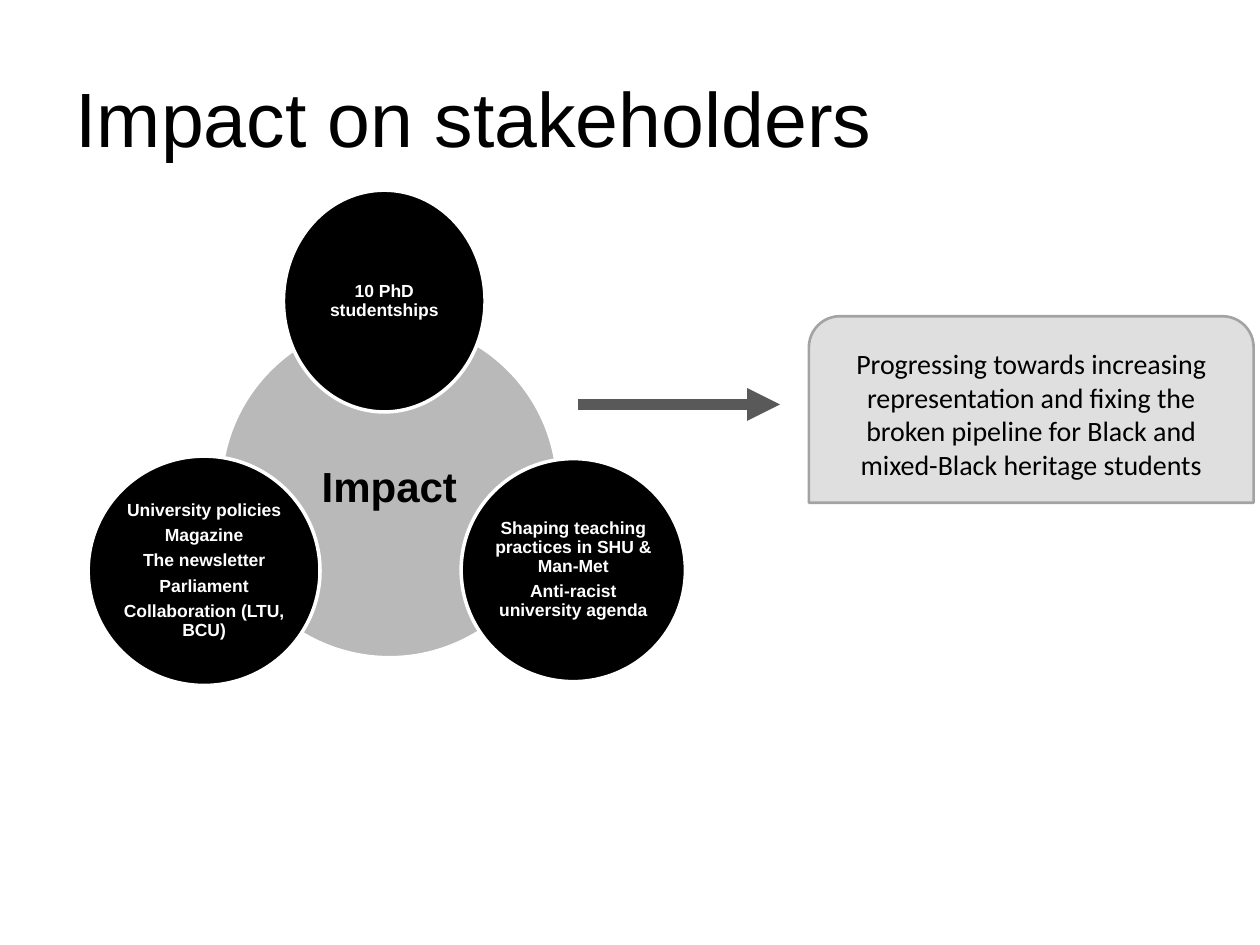
from dataclasses import dataclass

from lxml.etree import SubElement
from pptx import Presentation
from pptx.dml.color import RGBColor
from pptx.enum.shapes import MSO_CONNECTOR, MSO_SHAPE
from pptx.enum.text import MSO_ANCHOR, PP_ALIGN
from pptx.oxml.ns import qn
from pptx.util import Inches, Pt


@dataclass(frozen=True)
class Theme:
    black: RGBColor = RGBColor(0x00, 0x00, 0x00)
    white: RGBColor = RGBColor(0xFF, 0xFF, 0xFF)
    hub: RGBColor = RGBColor(0x74, 0x74, 0x74)
    arrow: RGBColor = RGBColor(0x59, 0x59, 0x59)
    outcome_fill: RGBColor = RGBColor(0xDF, 0xDF, 0xDF)
    outcome_line: RGBColor = RGBColor(0xA3, 0xA3, 0xA3)
    heading_font: str = "Arial"
    outcome_font: str = "Calibri"
    title_size: int = 44
    hub_size: int = 24
    outcome_size: int = 16
    satellite_size: int = 10


theme = Theme()


def add_run(paragraph, text, font_name, size, color, bold=False):
    run = paragraph.add_run()
    run.text = text
    run.font.name = font_name
    run.font.size = Pt(size)
    run.font.color.rgb = color
    run.font.bold = bold


def add_box(slide, preset, bounds, fill, line, line_width):
    shape = slide.shapes.add_shape(preset, *(Inches(value) for value in bounds))
    shape.shadow.inherit = False
    shape.fill.solid()
    shape.fill.fore_color.rgb = fill
    shape.line.color.rgb = line
    shape.line.width = Pt(line_width)
    shape.text_frame.word_wrap = True
    shape.text_frame.vertical_anchor = MSO_ANCHOR.MIDDLE
    return shape


presentation = Presentation()
presentation.slide_width = Inches(10)
presentation.slide_height = Inches(7.5)
slide = presentation.slides.add_slide(presentation.slide_layouts[5])

title = slide.shapes.title
title.left, title.top = Inches(0.5), Inches(0.3)
title.width, title.height = Inches(9), Inches(1.25)
title.text_frame.vertical_anchor = MSO_ANCHOR.MIDDLE
paragraph = title.text_frame.paragraphs[0]
paragraph.alignment = PP_ALIGN.LEFT
add_run(paragraph, "Impact on stakeholders", theme.heading_font, theme.title_size, theme.black)

circles = [
    ((1.75, 2.54, 2.68, 2.68), theme.hub, theme.black, theme.hub_size, 0.03, ["Impact"]),
    ((2.25, 1.51, 1.6, 1.76), theme.black, theme.white, theme.satellite_size, 0.01,
     ["10 PhD studentships"]),
    ((3.66, 3.64, 1.78, 1.77), theme.black, theme.white, theme.satellite_size, 0.01,
     ["Shaping teaching practices in SHU & Man-Met", "Anti-racist university agenda"]),
    ((0.7, 3.62, 1.84, 1.82), theme.black, theme.white, theme.satellite_size, 0.01,
     ["University policies", "Magazine", "The newsletter", "Parliament",
      "Collaboration (LTU, BCU)"]),
]
for bounds, fill, text_color, size, inset, lines in circles:
    circle = add_box(slide, MSO_SHAPE.OVAL, bounds, fill, theme.white, 2)
    if fill == theme.hub:
        color = circle.fill._xPr.find(qn("a:solidFill")).find(qn("a:srgbClr"))
        SubElement(color, qn("a:alpha"), val="50000")
    frame = circle.text_frame
    frame.margin_left = frame.margin_right = Inches(inset)
    frame.margin_top = frame.margin_bottom = Inches(inset)
    for index, text in enumerate(lines):
        paragraph = frame.add_paragraph() if index else frame.paragraphs[0]
        paragraph.alignment = PP_ALIGN.CENTER
        paragraph.line_spacing = 0.9
        paragraph.space_after = Pt(size * 0.35)
        add_run(paragraph, text, theme.heading_font, size, text_color, bold=True)

outcome = add_box(slide, MSO_SHAPE.ROUND_2_SAME_RECTANGLE, (6.42, 2.51, 3.53, 1.48),
                  theme.outcome_fill, theme.outcome_line, 1.5)
paragraph = outcome.text_frame.paragraphs[0]
paragraph.alignment = PP_ALIGN.CENTER
add_run(paragraph,
        "Progressing towards increasing representation and fixing the broken pipeline "
        "for Black and mixed-Black heritage students",
        theme.outcome_font, theme.outcome_size, theme.black)

arrow = slide.shapes.add_connector(
    MSO_CONNECTOR.STRAIGHT, Inches(4.59), Inches(3.21), Inches(6.19), Inches(3.21))
arrow.line.color.rgb = theme.arrow
arrow.line.width = Pt(6.25)
SubElement(arrow.line._get_or_add_ln(), qn("a:tailEnd"), type="triangle")
SubElement(arrow._element.spPr, qn("a:effectLst"))

presentation.save("out.pptx")
